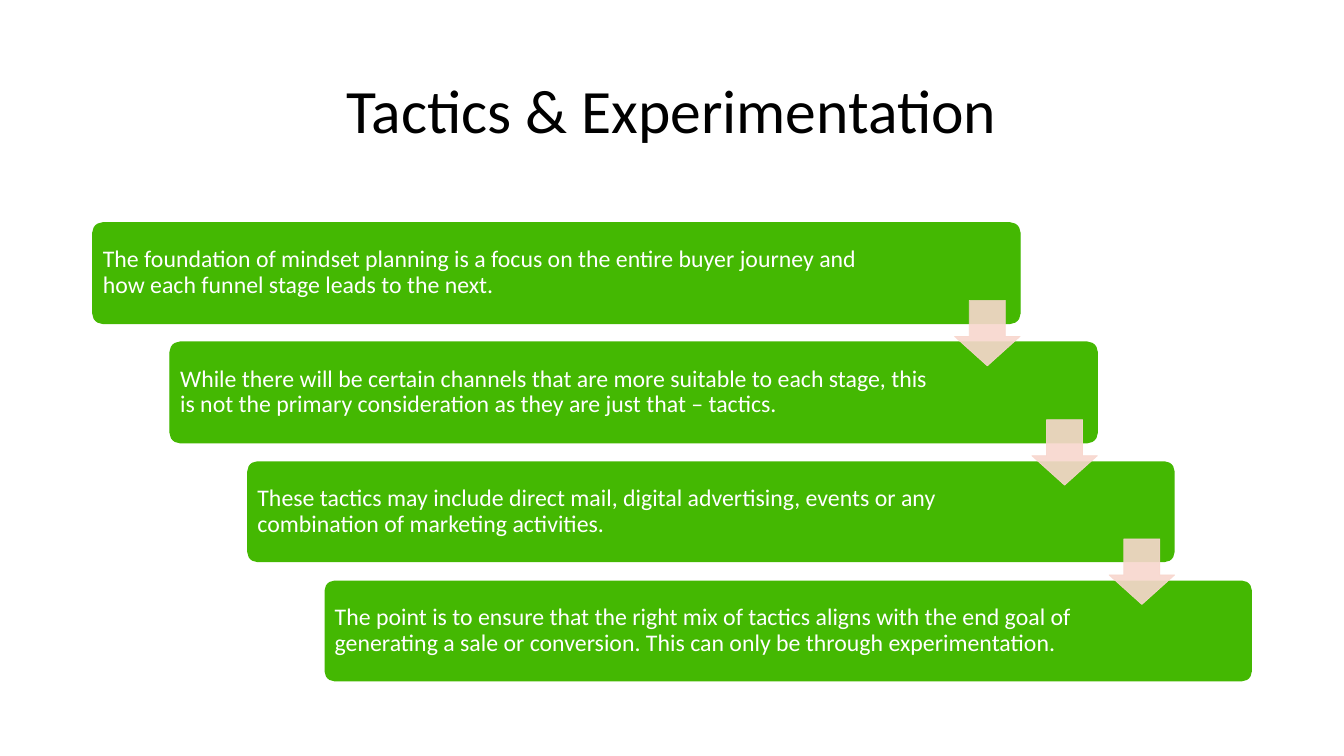
from dataclasses import dataclass

from lxml import etree
from pptx import Presentation
from pptx.dml.color import RGBColor
from pptx.enum import shapes, text
from pptx.oxml import ns
from pptx.util import Emu, Pt

SCALE = 3048
GREEN = "44B802"
PINK = "F8D7CE"
WHITE = "FFFFFF"
LEFT, TOP = 276, 663
STEP_X, STEP_Y = 230, 355
BAR_W, BAR_H = 2760, 300
PAD = 9
ARROW = 195
DROP = 231


@dataclass
class Step:
    words: str
    width: int
    edge: float


STEPS = [
    Step("The foundation of mindset planning is a focus on the entire buyer journey "
         "and how each funnel stage leads to the next.", 2412, 0.75),
    Step("While there will be certain channels that are more suitable to each stage, "
         "this is not the primary consideration as they are just that – tactics.", 2317, 0.75),
    Step("These tactics may include direct mail, digital advertising, events or any "
         "combination of marketing activities.", 2317, 0),
    Step("The point is to ensure that the right mix of tactics aligns with the end goal of "
         "generating a sale or conversion. This can only be through experimentation.", 2317, 0),
]


def px(size: int) -> Emu:
    return Emu(size * SCALE)


def tint(code: str) -> RGBColor:
    return RGBColor.from_string(code)


def write(slide, words: str, box: tuple, *, size: int, color: str,
          align=text.PP_ALIGN.LEFT, inset: int = 21) -> None:
    frame = slide.shapes.add_textbox(*map(px, box)).text_frame
    frame.word_wrap = True
    frame.vertical_anchor = text.MSO_ANCHOR.MIDDLE
    frame.margin_left = frame.margin_right = px(inset)
    frame.margin_top = frame.margin_bottom = px(inset)
    para = frame.paragraphs[0]
    para.alignment = align
    para.line_spacing = 0.9
    run = para.add_run()
    run.text = words
    run.font.name = "Calibri"
    run.font.size = Pt(size)
    run.font.color.rgb = tint(color)


def draw(slide, kind, box: tuple, *, fill: str, edge: float, ratios: tuple):
    shape = slide.shapes.add_shape(kind, *map(px, box))
    shape.shadow.inherit = False
    for place, ratio in enumerate(ratios):
        shape.adjustments[place] = ratio
    shape.fill.solid()
    shape.fill.fore_color.rgb = tint(fill)
    if edge:
        shape.line.color.rgb = tint(fill)
        shape.line.width = Pt(edge)
    else:
        shape.line.fill.background()
    return shape


def fade(shape, share: int) -> None:
    for color in shape.element.spPr.iter(ns.qn("a:srgbClr")):
        etree.SubElement(color, ns.qn("a:alpha")).set("val", str(share * 1000))


def main() -> None:
    deck = Presentation()
    deck.slide_width, deck.slide_height = px(4000), px(2250)
    slide = deck.slides.add_slide(deck.slide_layouts[6])
    write(slide, "Tactics & Experimentation", (273, 120, 3453, 435),
          size=44, color="000000", align=text.PP_ALIGN.CENTER)
    spots = [(LEFT + i * STEP_X, TOP + i * STEP_Y) for i in range(len(STEPS))]
    for step, (x, y) in zip(STEPS, spots):
        draw(slide, shapes.MSO_SHAPE.ROUNDED_RECTANGLE, (x, y, BAR_W, BAR_H),
             fill=GREEN, edge=step.edge, ratios=(0.1,))
        write(slide, step.words, (x + PAD, y + PAD, step.width, BAR_H - 2 * PAD),
              size=17, color=WHITE)
    for x, y in spots[:-1]:
        arrow = draw(slide, shapes.MSO_SHAPE.DOWN_ARROW,
                     (x + BAR_W - ARROW, y + DROP, ARROW, ARROW),
                     fill=PINK, edge=0.5, ratios=(0.55, 0.45))
        fade(arrow, 90)
    deck.save("out.pptx")


if __name__ == "__main__":
    main()
